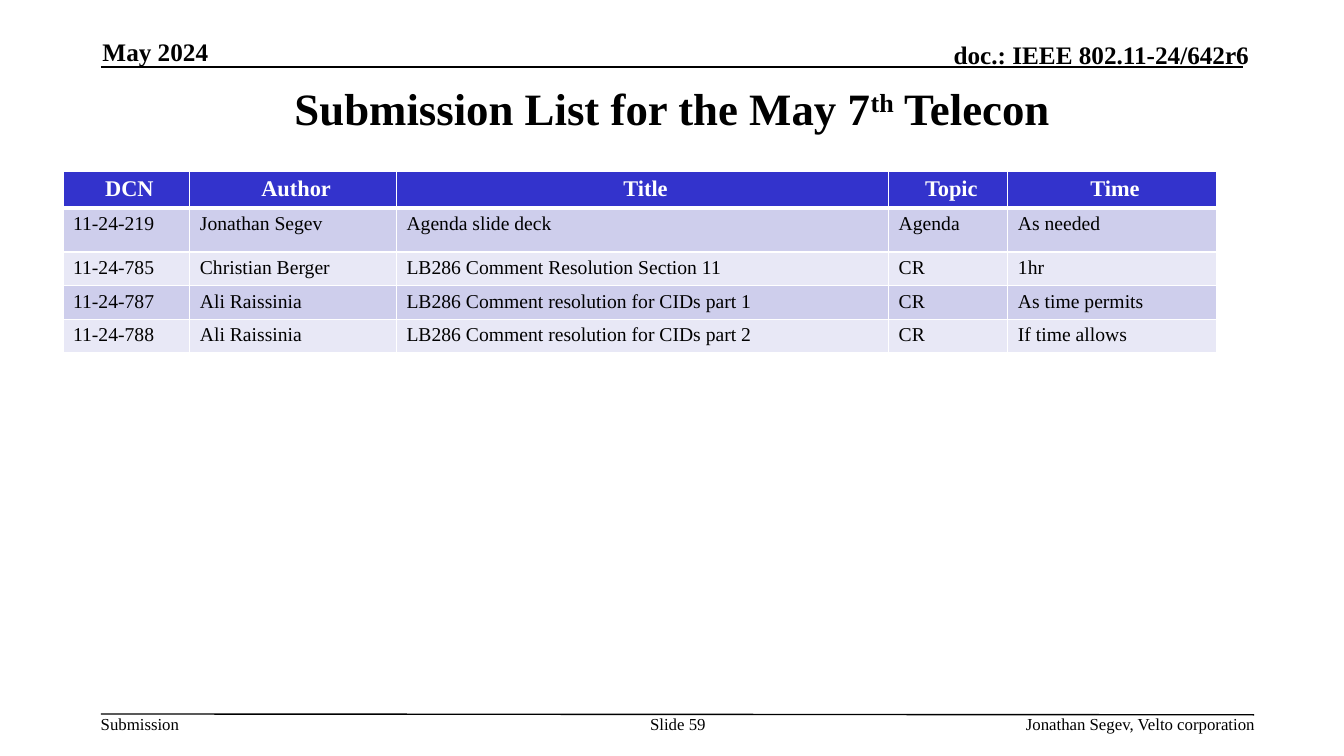
from lxml.etree import SubElement
from pptx import Presentation
from pptx.dml.color import RGBColor
from pptx.enum.shapes import MSO_CONNECTOR
from pptx.enum.text import MSO_ANCHOR, PP_ALIGN
from pptx.oxml.ns import qn
from pptx.util import Inches, Pt

COLORS = {"ink": "000000", "paper": "FFFFFF", "header": "3333CC",
          "odd_row": "CECEEC", "even_row": "E8E8F6"}
HEADINGS = ["DCN", "Author", "Title", "Topic", "Time"]
SUBMISSIONS = [
    ["11-24-219", "Jonathan Segev", "Agenda slide deck", "Agenda", "As needed"],
    ["11-24-785", "Christian Berger", "LB286 Comment Resolution Section 11", "CR", "1hr"],
    ["11-24-787", "Ali Raissinia", "LB286 Comment resolution for CIDs part 1", "CR",
     "As time permits"],
    ["11-24-788", "Ali Raissinia", "LB286 Comment resolution for CIDs part 2", "CR",
     "If time allows"],
]


class SlideBuilder:
    """Places styled elements on a grid of 160 columns by 90 rows."""
    font_name = "Times New Roman"
    columns, rows = 160, 90

    def __init__(self, deck):
        self.column = deck.slide_width / self.columns
        self.row = deck.slide_height / self.rows
        self.page = deck.slides.add_slide(deck.slide_layouts[5])

    def place(self, left, top, width, height):
        """Turn grid units into slide lengths."""
        return (round(left * self.column), round(top * self.row),
                round(width * self.column), round(height * self.row))

    def style(self, para, size, bold=False, color="ink", align=PP_ALIGN.LEFT):
        para.alignment = align
        for span in para.runs:
            font = span.font
            font.name, font.size, font.bold = self.font_name, Pt(size), bold
            font.color.rgb = RGBColor.from_string(COLORS[color])

    def title(self, area, spans):
        """Fill the title from (text, is superscript) pairs."""
        box = self.page.shapes.title
        box.left, box.top, box.width, box.height = self.place(*area)
        box.text_frame.vertical_anchor = MSO_ANCHOR.MIDDLE
        para = box.text_frame.paragraphs[0]
        for text, superscript in spans:
            span = para.add_run()
            span.text = text
            if superscript:
                span.font._element.set("baseline", "30000")
        self.style(para, 32, bold=True, align=PP_ALIGN.CENTER)

    def label(self, area, text, size, align=PP_ALIGN.LEFT, bold=False,
              anchor=MSO_ANCHOR.TOP, wrap=True):
        frame = self.page.shapes.add_textbox(*self.place(*area)).text_frame
        frame.margin_left = frame.margin_right = frame.margin_top = frame.margin_bottom = 0
        frame.word_wrap, frame.vertical_anchor = wrap, anchor
        frame.text = text
        self.style(frame.paragraphs[0], size, bold, align=align)

    def rule(self, start, end):
        line = self.page.shapes.add_connector(
            MSO_CONNECTOR.STRAIGHT, *self.place(*start, *end))
        line.line.color.rgb = RGBColor.from_string(COLORS["ink"])
        line.line.width = Pt(1)
        SubElement(line._element.spPr, qn("a:effectLst"))

    def borders(self, cell, widths):
        properties = cell._tc.get_or_add_tcPr()
        for side, width in widths.items():
            edge = SubElement(properties, qn(f"a:ln{side}"), w=str(Pt(width)))
            fill = SubElement(edge, qn("a:solidFill"))
            SubElement(fill, qn("a:srgbClr"), val=COLORS["paper"])

    def table(self, corner, widths, heights, records):
        area = self.place(*corner, sum(widths), sum(heights))
        table = self.page.shapes.add_table(len(heights), len(widths), *area).table
        for column, width in zip(table.columns, widths):
            column.width = round(width * self.column)
        for row, height in zip(table.rows, heights):
            row.height = round(height * self.row)
        for r, record in enumerate(records):
            header = r == 0
            fill = "header" if header else "odd_row" if r % 2 else "even_row"
            for c, text in enumerate(record):
                cell = table.cell(r, c)
                self.borders(cell, {"L": 1, "R": 1, "T": 3 if r == 1 else 1,
                                    "B": 3 if header else 1})
                cell.fill.solid()
                cell.fill.fore_color.rgb = RGBColor.from_string(COLORS[fill])
                cell.text = text
                para = cell.text_frame.paragraphs[0]
                if header:
                    cell.margin_right = Inches(0.04)
                    self.style(para, 16, True, "paper", PP_ALIGN.CENTER)
                else:
                    self.style(para, 14)


def main():
    deck = Presentation()
    deck.slide_width, deck.slide_height = Inches(13.33), Inches(7.5)
    slide = SlideBuilder(deck)
    footer = 85

    slide.rule((12, 8), (148, 8))
    slide.rule((12, footer), (149.3, footer + 0.1))
    slide.label((12.2, 4.3, 32.8, 3.6), "May 2024", 18, bold=True,
                anchor=MSO_ANCHOR.BOTTOM)
    slide.label((87.5, 4.7, 61.2, 3.6), "doc.: IEEE 802.11-24/642r6", 18,
                PP_ALIGN.RIGHT, bold=True, anchor=MSO_ANCHOR.BOTTOM)
    slide.title((12, 9, 136, 7.7), [("Submission List for the May 7", False),
                                    ("th", True), (" Telecon", False)])
    slide.table((7.5, 20.4), [15.1, 24.6, 58.6, 14.2, 24.8],
                [3.9, 5.2, 3.75, 3.75, 3.75], [HEADINGS, *SUBMISSIONS])
    slide.label((12, footer, 9.5, 2.4), "Submission", 12, wrap=False)
    slide.label((76.1, footer, 9.2, 4.8), "Slide 59", 12, PP_ALIGN.CENTER)
    slide.label((93.7, footer, 55.7, 2.4), "Jonathan Segev, Velto corporation", 12,
                PP_ALIGN.RIGHT)
    deck.save("out.pptx")


if __name__ == "__main__":
    main()
